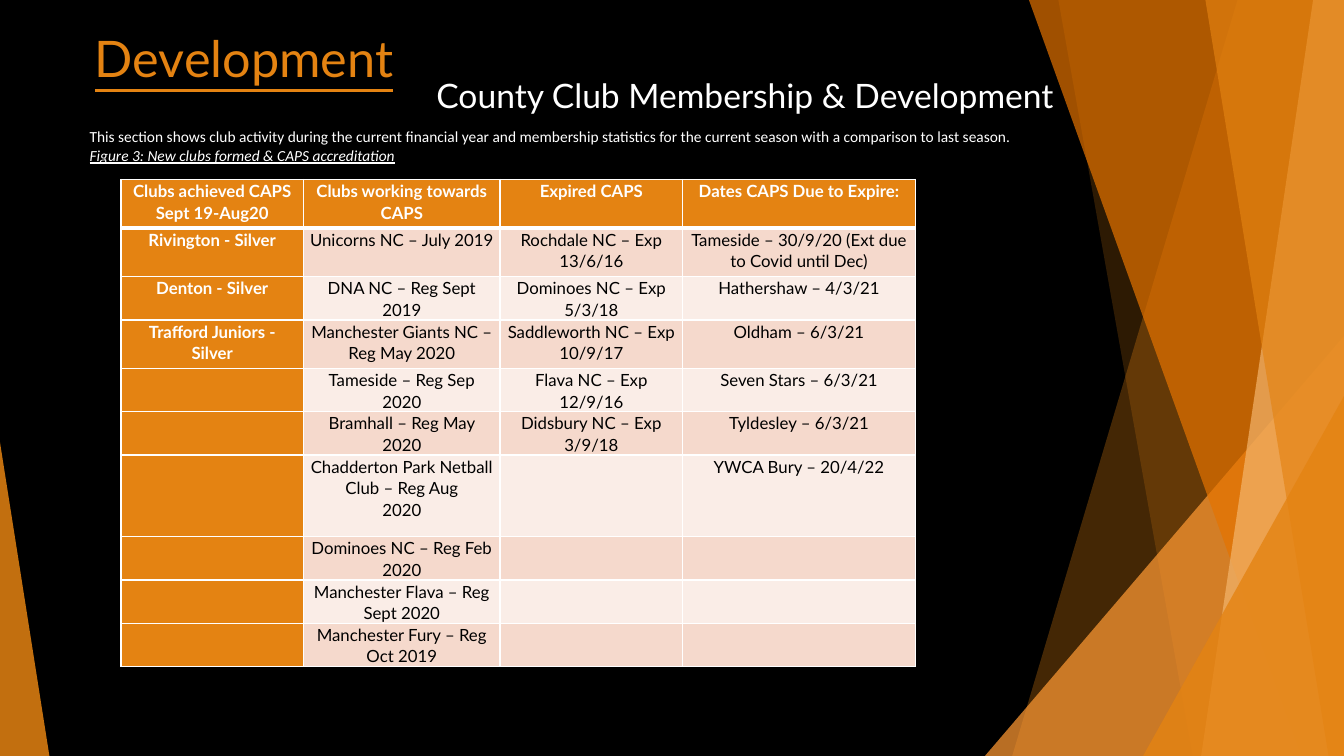
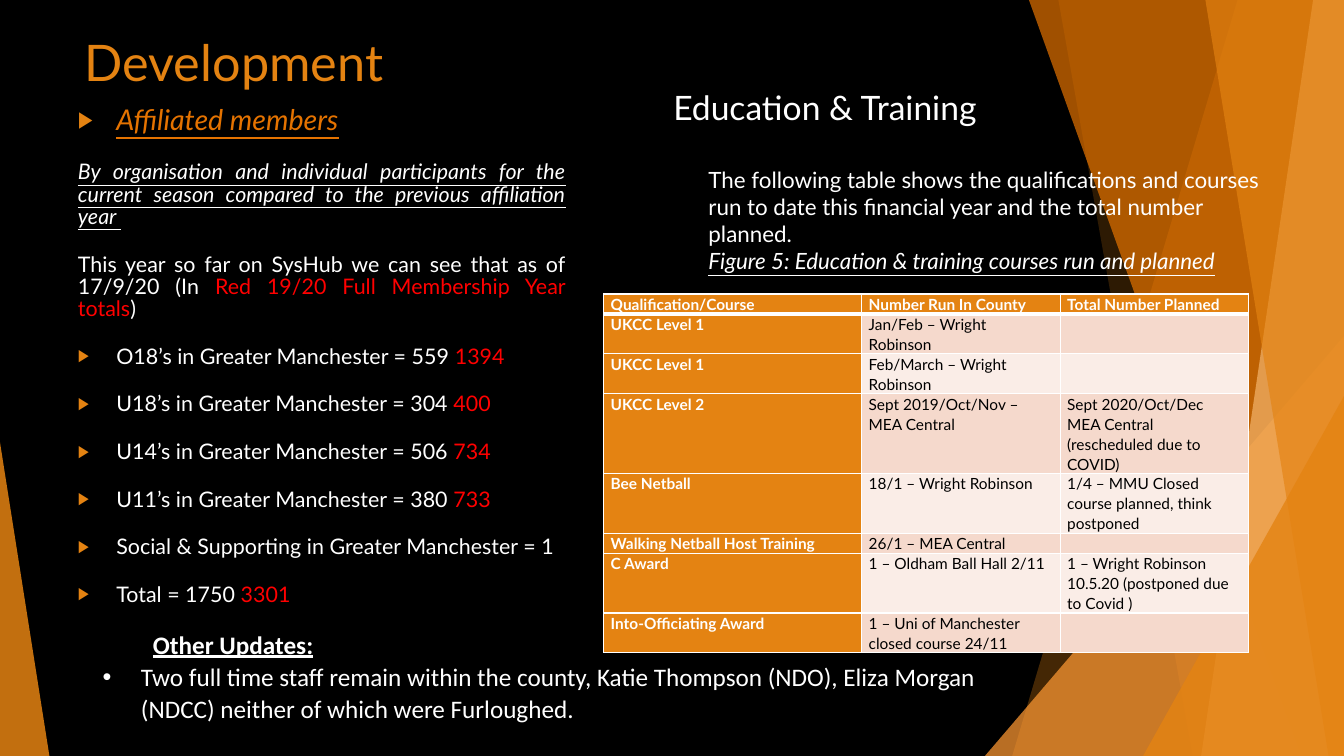
from lxml import etree
from pptx import Presentation
from pptx import util as u
from pptx.dml.color import RGBColor
from pptx.enum import shapes, text
from pptx.oxml.ns import qn

Pt = u.Pt
BLACK = RGBColor(0x00, 0x00, 0x00)
WHITE = RGBColor(0xFF, 0xFF, 0xFF)
RED = RGBColor(0xFF, 0x00, 0x00)
ORANGE = RGBColor(0xE4, 0x83, 0x12)
DEEP_ORANGE = RGBColor(0xE5, 0x73, 0x00)
BRIGHT_ORANGE = RGBColor(0xFF, 0x99, 0x33)
PALE_ORANGE = RGBColor(0xF3, 0xB5, 0x6C)
DARK_BAND = RGBColor(0xF5, 0xD9, 0xCC)
LIGHT_BAND = RGBColor(0xFA, 0xED, 0xE7)

WIDTH, HEIGHT = 960, 540
LEFT, CENTER, JUSTIFY = text.PP_ALIGN.LEFT, text.PP_ALIGN.CENTER, text.PP_ALIGN.JUSTIFY
TOP, BOTTOM = text.MSO_ANCHOR.TOP, text.MSO_ANCHOR.BOTTOM


def write(para, spans, layout, indent=None, bullet=None):
    """Fill a paragraph; each span is (words, colour, font values)."""
    props = para._p.get_or_add_pPr()
    if indent:
        props.set("marL", str(Pt(indent[0])))
        props.set("indent", str(Pt(indent[1])))
    for name, value in layout.items():
        setattr(para, name, value)
    if bullet:
        sign, colour, percent = bullet
        holder = etree.SubElement(props, qn("a:buClr"))
        etree.SubElement(holder, qn("a:srgbClr"), val=str(colour))
        etree.SubElement(props, qn("a:buSzPct"), val=str(percent * 1000))
        etree.SubElement(props, qn("a:buFont"), typeface="Arial")
        etree.SubElement(props, qn("a:buChar"), char=sign)
    for words, colour, font in spans:
        for number, line in enumerate(words.split("\n")):
            if number:
                para.add_line_break()
                etree.SubElement(para._p[-1], qn("a:rPr"), sz=str(font["size"].centipoints))
            span = para.add_run()
            span.text = line
            span.font.color.rgb = colour
            for name, value in font.items():
                setattr(span.font, name, value)


def add_grid(page, place, widths, heights, rows, size, inset, align):
    """Add a table with an orange header row and first column."""
    frame = page.shapes.add_table(len(rows), len(widths), *map(Pt, place),
                                  Pt(sum(widths)), Pt(sum(heights)))
    grid = frame.table
    for column, width in zip(grid.columns, widths):
        column.width = Pt(width)
    for line, height in zip(grid.rows, heights):
        line.height = Pt(height)
    for r, row in enumerate(rows):
        for c, words in enumerate(row):
            cell = grid.cell(r, c)
            heading = r == 0 or c == 0
            margins = {"margin_left": inset, "margin_right": inset,
                       "margin_top": 0, "margin_bottom": 0}
            for name, value in margins.items():
                setattr(cell, name, Pt(value))
            # Borders, with a thick rule under the header
            thick = {0: "lnB", 1: "lnT"}.get(r)
            for edge in ("lnL", "lnR", "lnT", "lnB"):
                border = etree.SubElement(cell._tc.get_or_add_tcPr(), qn("a:" + edge),
                                          w=str(Pt(3 if edge == thick else 1)))
                paint = etree.SubElement(border, qn("a:solidFill"))
                etree.SubElement(paint, qn("a:srgbClr"), val=str(WHITE))
            cell.fill.solid()
            cell.fill.fore_color.rgb = (ORANGE if heading else
                                        DARK_BAND if r % 2 else LIGHT_BAND)
            para = cell.text_frame.paragraphs[0]
            font = {"size": Pt(size), "name": "Lato", "bold": heading}
            spans = [(words, WHITE if heading else BLACK, font)] if words else []
            write(para, spans, {"alignment": align, "line_spacing": 1.07,
                                "space_after": Pt(8)})
            if not words:
                etree.SubElement(para._p, qn("a:endParaRPr"), sz=str(size * 100))


deck = Presentation()
deck.slide_width, deck.slide_height = Pt(WIDTH), Pt(HEIGHT)
title_only = deck.slide_layouts[5]
backdrop = deck.slide_master.background.fill
backdrop.solid()
backdrop.fore_color.rgb = BLACK

# Titles
pages = []
for left, top, underline in ((60.5, 15.8, True), (53.3, 18.7, False)):
    page = deck.slides.add_slide(title_only)
    title = page.shapes.title
    title.left, title.top, title.width, title.height = map(Pt, (left, top, 677, 104))
    title.text_frame.vertical_anchor = TOP
    title.text_frame.auto_size = text.MSO_AUTO_SIZE.NONE
    write(title.text_frame.paragraphs[0],
          [("Development", ORANGE, {"size": Pt(36), "name": "Lato", "underline": underline})],
          {"alignment": LEFT})
    pages.append(page)
club_page, training_page = pages

# Shared facets: bands are (top x, bottom x), triangles (left, top, width, apex)
facets = [
    ((884, 723), ORANGE, 30),
    ((756, 852), ORANGE, 20),
    ((703.5, 240, 256.5, 1), BRIGHT_ORANGE, 72),
    ((735, 929.5), DEEP_ORANGE, 70),
    ((938, 858), PALE_ORANGE, 70),
    ((861, 949), ORANGE, 65),
    ((816.5, 283, 143.5, 1), ORANGE, 80),
    ((0, 316, 35.3, 0), ORANGE, 85),
]
for position, (outline, colour, opacity) in enumerate(facets):
    if len(outline) == 2:
        top_x, bottom_x = outline
        pen = club_page.shapes.build_freeform(Pt(top_x), 0)
        pen.add_line_segments([(Pt(WIDTH), 0), (Pt(WIDTH), Pt(HEIGHT)),
                               (Pt(bottom_x), Pt(HEIGHT))])
        facet = pen.convert_to_shape()
    else:
        left, top, width, apex = outline
        facet = club_page.shapes.add_shape(shapes.MSO_SHAPE.ISOSCELES_TRIANGLE, Pt(left),
                                           Pt(top), Pt(width), Pt(HEIGHT - top))
        facet.adjustments[0] = apex
    facet.shadow.inherit = False
    facet.line.fill.background()
    facet.fill.solid()
    facet.fill.fore_color.rgb = colour
    tint = facet.fill._xPr.find(qn("a:solidFill"))[0]
    etree.SubElement(tint, qn("a:alpha"), val=str(opacity * 1000))
    # Keep the facet on the layout, behind everything else
    title_only.shapes._spTree.insert(2 + position, facet._element)

# Club table
club_rows = [
    ("Clubs achieved CAPS Sept 19-Aug20", "Clubs working towards CAPS", "Expired CAPS",
     "Dates CAPS Due to Expire:"),
    ("Rivington - Silver", "Unicorns NC – July 2019", "Rochdale NC – Exp 13/6/16",
     "Tameside – 30/9/20 (Ext due to Covid until Dec)"),
    ("Denton - Silver", "DNA NC – Reg Sept 2019", "Dominoes NC – Exp 5/3/18",
     "Hathershaw – 4/3/21"),
    ("Trafford Juniors - Silver", "Manchester Giants NC – Reg May 2020",
     "Saddleworth NC – Exp 10/9/17", "Oldham – 6/3/21"),
    ("", "Tameside – Reg Sep 2020", "Flava NC – Exp 12/9/16", "Seven Stars – 6/3/21"),
    ("", "Bramhall – Reg May 2020", "Didsbury NC – Exp 3/9/18", "Tyldesley – 6/3/21"),
    ("", "Chadderton Park Netball Club – Reg Aug\n2020", "", "YWCA Bury – 20/4/22"),
    ("", "Dominoes NC – Reg Feb 2020", "", ""),
    ("", "Manchester Flava – Reg Sept 2020", "", ""),
    ("", "Manchester Fury – Reg Oct 2019", "", ""),
]
tall, short = 34.8, 30.7
add_grid(club_page, (86.4, 128.2), (130.5, 140.3, 130.5, 166.3),
         [tall, tall, short, tall, short, short, 58.5, short, short, short],
         club_rows, 12, 4.5, CENTER)

# Training table
training_rows = [
    ("Qualification/Course", "Number Run In County", "Total Number Planned"),
    ("UKCC Level 1", "Jan/Feb – Wright Robinson", ""),
    ("UKCC Level 1", "Feb/March – Wright Robinson", ""),
    ("UKCC Level 2", "Sept 2019/Oct/Nov – MEA Central",
     "Sept 2020/Oct/Dec\nMEA Central\n(rescheduled due to COVID)"),
    ("Bee Netball", "18/1 – Wright Robinson", "1/4 – MMU Closed course planned, think postponed"),
    ("Walking Netball Host Training", "26/1 – MEA Central", ""),
    ("C Award", "1 – Oldham Ball Hall 2/11", "1 – Wright Robinson 10.5.20 (postponed due to Covid )"),
    ("Into-Officiating Award", "1 – Uni of Manchester closed course 24/11", ""),
]
add_grid(training_page, (431.2, 210), (184.3, 141.8, 134.8),
         [14 * lines for lines in (1, 2, 2, 4, 3, 1, 3, 2)], training_rows, 11, 5, LEFT)

# Paragraphs of the text boxes
heading = {"size": Pt(24), "name": "Lato"}
intro = {"size": Pt(11), "name": "Calibri"}
lead = {"size": Pt(16), "name": "Lato"}
member = {"size": Pt(15.3), "name": "Lato"}
update = {"size": Pt(18), "name": "Calibri"}
caption = {"italic": True, "underline": True}
plain = {"alignment": LEFT}
first = {"alignment": JUSTIFY, "line_spacing": 0.87, "space_after": Pt(8)}
spaced = {**first, "space_before": Pt(10)}
loose = {"alignment": LEFT, "line_spacing": 1.07}
hanging = (27.4, -27.4)
arrow = ("▶", ORANGE, 80)

members = [
    ([("Affiliated members", DEEP_ORANGE, {**member, **caption, "size": Pt(20.4)})],
     first, hanging, arrow),
    ([("By organisation and individual participants for the current season compared to the "
       "previous affiliation year ", WHITE, {**member, **caption})], spaced),
    ([("This year so far on SysHub we can see that as of 17/9/20 (In ", WHITE, member),
      ("Red 19/20 Full Membership Year totals", RED, member), (")", WHITE, member)], spaced),
]
for label, now, before in (("O18’s in Greater Manchester", 559, 1394),
                           ("U18’s in Greater Manchester", 304, 400),
                           ("U14’s in Greater Manchester", 506, 734),
                           ("U11’s in Greater Manchester", 380, 733),
                           ("Social & Supporting in Greater Manchester", 1, None),
                           ("Total", 1750, 3301)):
    spans = [(f"{label} = {now}", WHITE, member)]
    if before:
        spans.append((f" {before}", RED, member))
    members.append((spans, spaced, hanging, arrow))

# Text boxes: page, place, anchor, paragraphs
boxes = [
    (club_page, (304.6, 49.7, 476.6, 36), BOTTOM,
     [([("County Club Membership & Development", WHITE, heading)], plain)]),
    (club_page, (56.9, 87.6, 700, 34), TOP,
     [([("This section shows club activity during the current financial year and membership "
         "statistics for the current season with a comparison to last season.", WHITE, intro)],
       plain),
      ([("Figure 3: New clubs formed & CAPS accreditation", WHITE, {**intro, **caption})],
       plain)]),
    (training_page, (48.6, 72.7, 362.5, 373.7), TOP, members),
    (training_page, (473.8, 49, 329.8, 45.4), BOTTOM,
     [([("Education & Training", WHITE, heading)], plain)]),
    (training_page, (499, 115.4, 408.2, 84), TOP,
     [([("The following table shows the qualifications and courses run to date this financial "
         "year and the total number planned.", WHITE, lead)], plain),
      ([("Figure 5: Education & training courses run and planned", WHITE,
         {**lead, **caption})], plain)]),
    (training_page, (66.2, 444.2, 689, 76.3), TOP,
     [([("Other Updates:", WHITE, {**update, "bold": True, "underline": True})],
       loose, (36, 0)),
      ([("Two full time staff remain within the county, Katie Thompson (NDO), Eliza Morgan "
         "(NDCC) neither of which were Furloughed.", WHITE, update)],
       loose, hanging, ("•", WHITE, 100))]),
]
for page, place, anchor, paragraphs in boxes:
    frame = page.shapes.add_textbox(*map(Pt, place)).text_frame
    frame.word_wrap = True
    frame.vertical_anchor = anchor
    for number, paragraph in enumerate(paragraphs):
        para = frame.add_paragraph() if number else frame.paragraphs[0]
        write(para, *paragraph)

deck.save("out.pptx")
